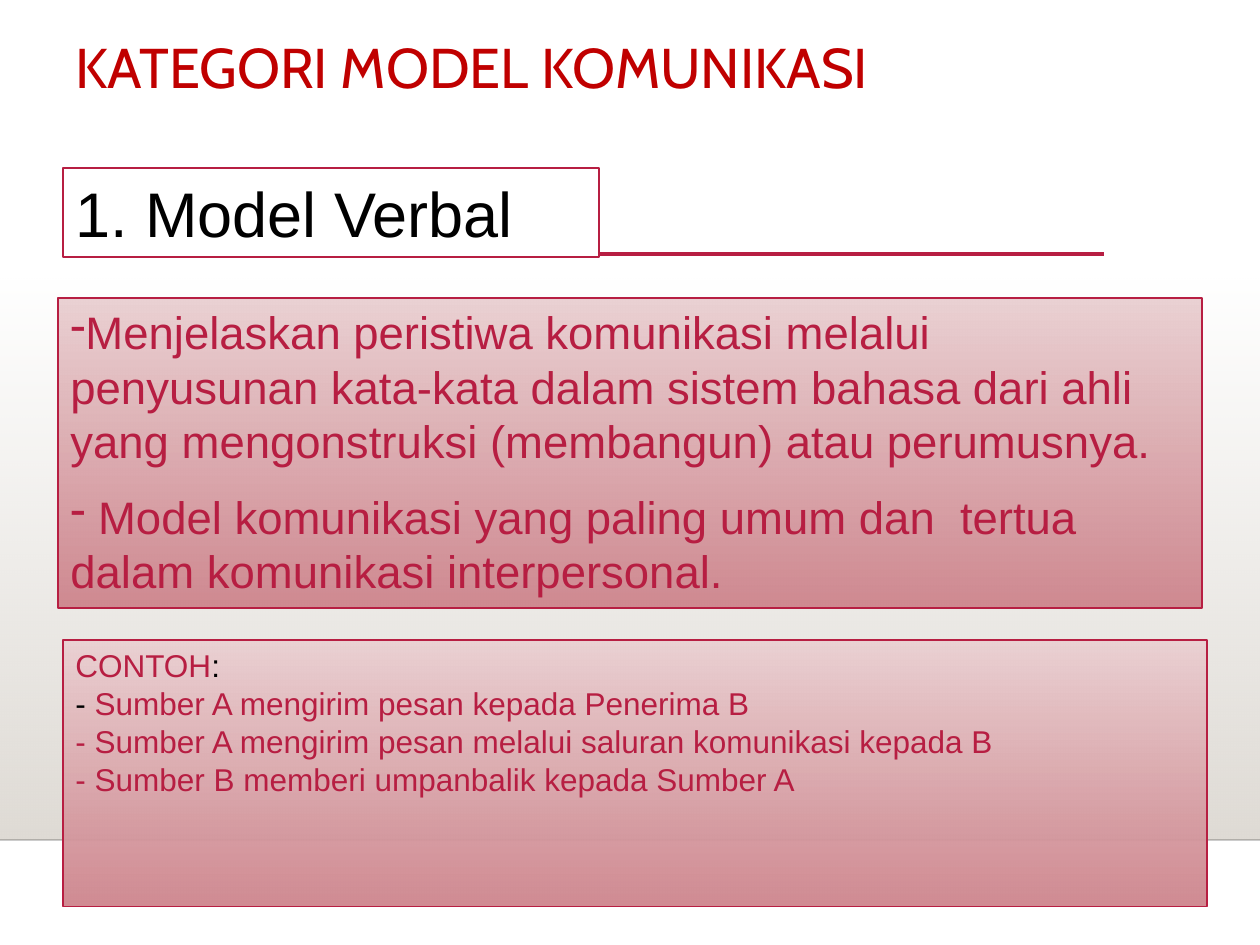
from lxml.etree import SubElement
from pptx import Presentation
from pptx.dml.color import RGBColor
from pptx.enum.shapes import MSO_CONNECTOR as CONNECTOR, MSO_SHAPE as SHAPE
from pptx.enum.text import MSO_ANCHOR as ANCHOR, PP_ALIGN as ALIGN
from pptx.oxml.ns import qn
from pptx.util import Pt

PX = 914400 // 126
COLORS = {
    "title": "C00000",
    "accent": "B71E42",
    "black": "000000",
    "white": "FFFFFF",
    "sand": "DFDBD5",
    "pink_light": "EAD1D3",
    "pink_dark": "CD828A",
}
PINK = [("pink_light", 100), ("pink_dark", 92)]
SAND = [("sand", 0), ("sand", 100)]


def rgb(name):
    return RGBColor.from_string(COLORS[name])


def set_alpha(fill_element, percent):
    color = fill_element.find(".//" + qn("a:srgbClr"))
    SubElement(color, qn("a:alpha"), val=str(percent * 1000))


def fill_gradient(shape, stops):
    """Fill from top to bottom with (colour, opacity) stops."""
    shape.fill.gradient()
    shape.fill.gradient_angle = 270
    elements = shape._element.spPr.findall(".//" + qn("a:gs"))
    for stop, element, (color, opacity) in zip(shape.fill.gradient_stops, elements, stops):
        stop.color.rgb = rgb(color)
        if opacity < 100:
            set_alpha(element, opacity)


def add_box(slide, left, top, width, height, line_width=0, gradient=None):
    shape = slide.shapes.add_shape(
        SHAPE.RECTANGLE, left * PX, top * PX, width * PX, height * PX)
    shape.shadow.inherit = False
    if gradient:
        fill_gradient(shape, gradient)
    else:
        shape.fill.solid()
        shape.fill.fore_color.rgb = rgb("white")
    if line_width:
        shape.line.color.rgb = rgb("accent")
        shape.line.width = Pt(line_width)
    else:
        shape.line.fill.background()
    return shape


def add_line(slide, left, right, y, color, width, opacity=100):
    line = slide.shapes.add_connector(
        CONNECTOR.STRAIGHT, left * PX, y * PX, right * PX, y * PX)
    line.line.color.rgb = rgb(color)
    line.line.width = Pt(width)
    if opacity < 100:
        set_alpha(line._element.spPr, opacity)
    SubElement(line._element.spPr, qn("a:effectLst"))


def write(shape, paragraphs, size, font="Arial", bullet=None, space_after=0):
    """Write paragraphs, each a list of (text, colour) runs."""
    frame = shape.text_frame
    frame.word_wrap = True
    frame.vertical_anchor = ANCHOR.TOP
    for index, runs in enumerate(paragraphs):
        paragraph = frame.add_paragraph() if index else frame.paragraphs[0]
        paragraph.alignment = ALIGN.LEFT
        paragraph.space_after = Pt(space_after)
        if bullet:
            SubElement(paragraph._p.get_or_add_pPr(), qn("a:buChar"), char=bullet)
        for text, color in runs:
            run = paragraph.add_run()
            run.text = text
            run.font.name = font
            run.font.size = Pt(size)
            run.font.color.rgb = rgb(color)
    return frame


def main():
    presentation = Presentation()
    presentation.slide_width = 1260 * PX
    presentation.slide_height = 945 * PX
    slide = presentation.slides.add_slide(presentation.slide_layouts[6])

    # Backdrop
    add_box(slide, 0, 278, 1260, 562, gradient=SAND)
    add_line(slide, 0, 1260, 840, "black", 1, opacity=20)
    add_line(slide, 199, 1104, 254, "accent", 2.5)

    # Title
    title = slide.shapes.add_textbox(63 * PX, 34 * PX, 1155 * PX, 135 * PX)
    frame = write(title, [[("KATEGORI MODEL KOMUNIKASI", "title")]], 32, "Cabin")
    frame.paragraphs[0].line_spacing = 0.9

    # Heading
    heading = add_box(slide, 63, 168, 536, 89, 1.25)
    write(heading, [[("1. Model Verbal", "black")]], 36)

    # Explanation
    explanation = add_box(slide, 58, 298, 1144, 310, 0.75, PINK)
    write(explanation, [
        [("Menjelaskan peristiwa komunikasi melalui penyusunan kata-kata dalam sistem "
          "bahasa dari ahli yang mengonstruksi (membangun) atau perumusnya.", "accent")],
        [(" Model komunikasi yang paling umum dan  tertua dalam komunikasi "
          "interpersonal.", "accent")],
    ], 26, bullet="-", space_after=12)

    # Examples
    examples = add_box(slide, 63, 640, 1144, 267, 0.75, PINK)
    write(examples, [
        [("CONTOH", "accent"), (":", "black")],
        [("- ", "black"), ("Sumber A mengirim pesan kepada Penerima B", "accent")],
        [("- Sumber A mengirim pesan melalui saluran komunikasi kepada B", "accent")],
        [("- Sumber B memberi umpanbalik kepada Sumber A", "accent")],
    ], 18)

    presentation.save("out.pptx")


if __name__ == "__main__":
    main()
